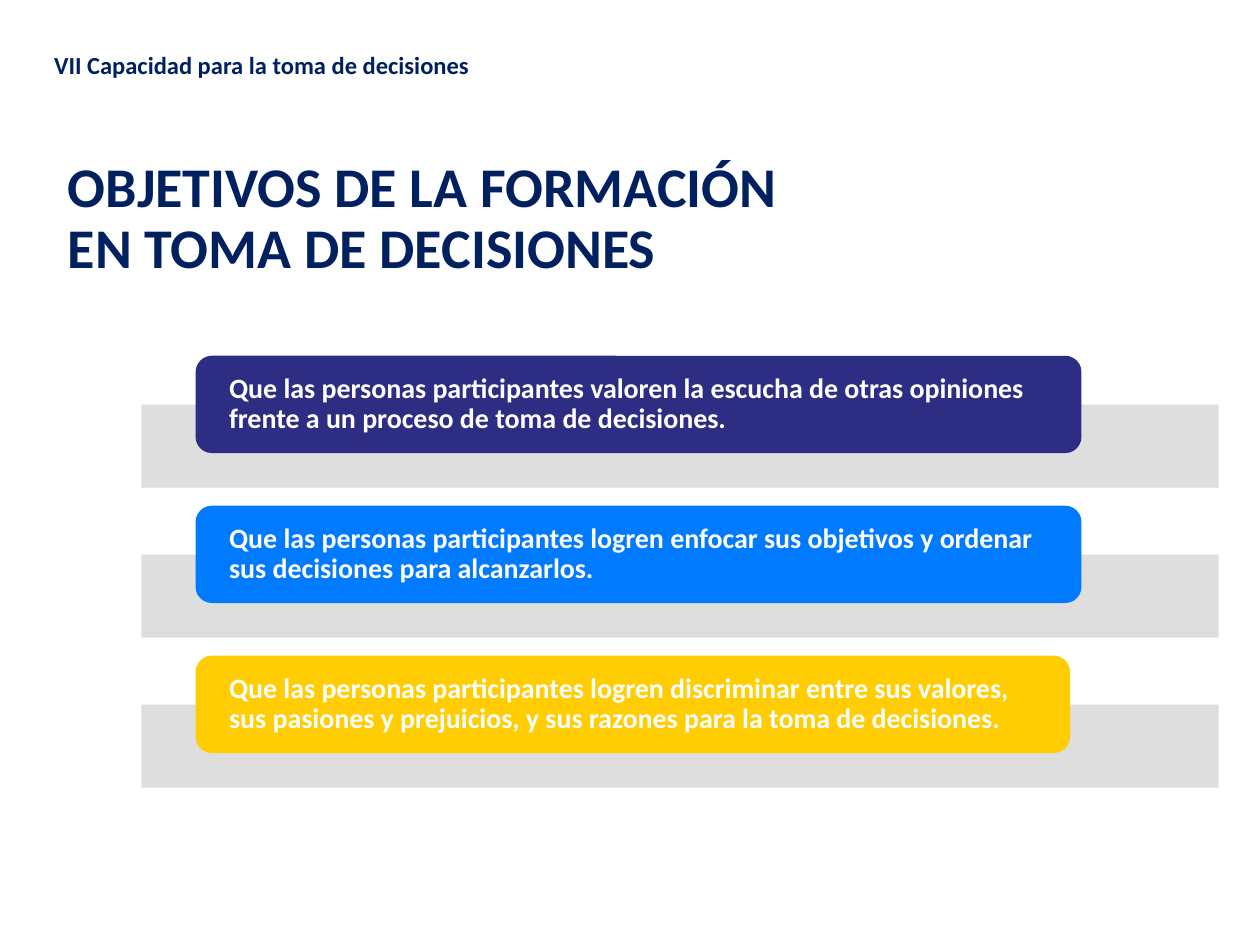
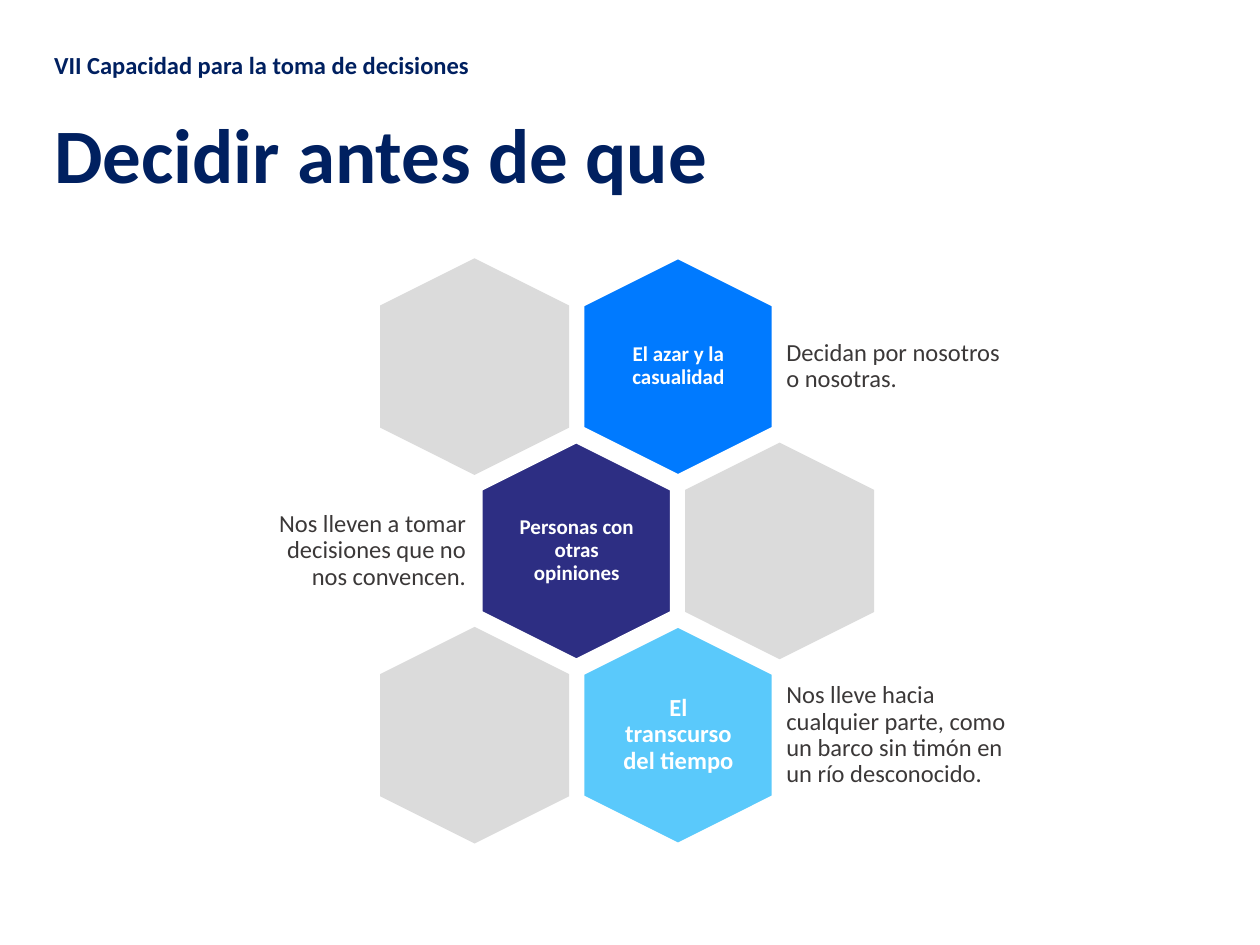
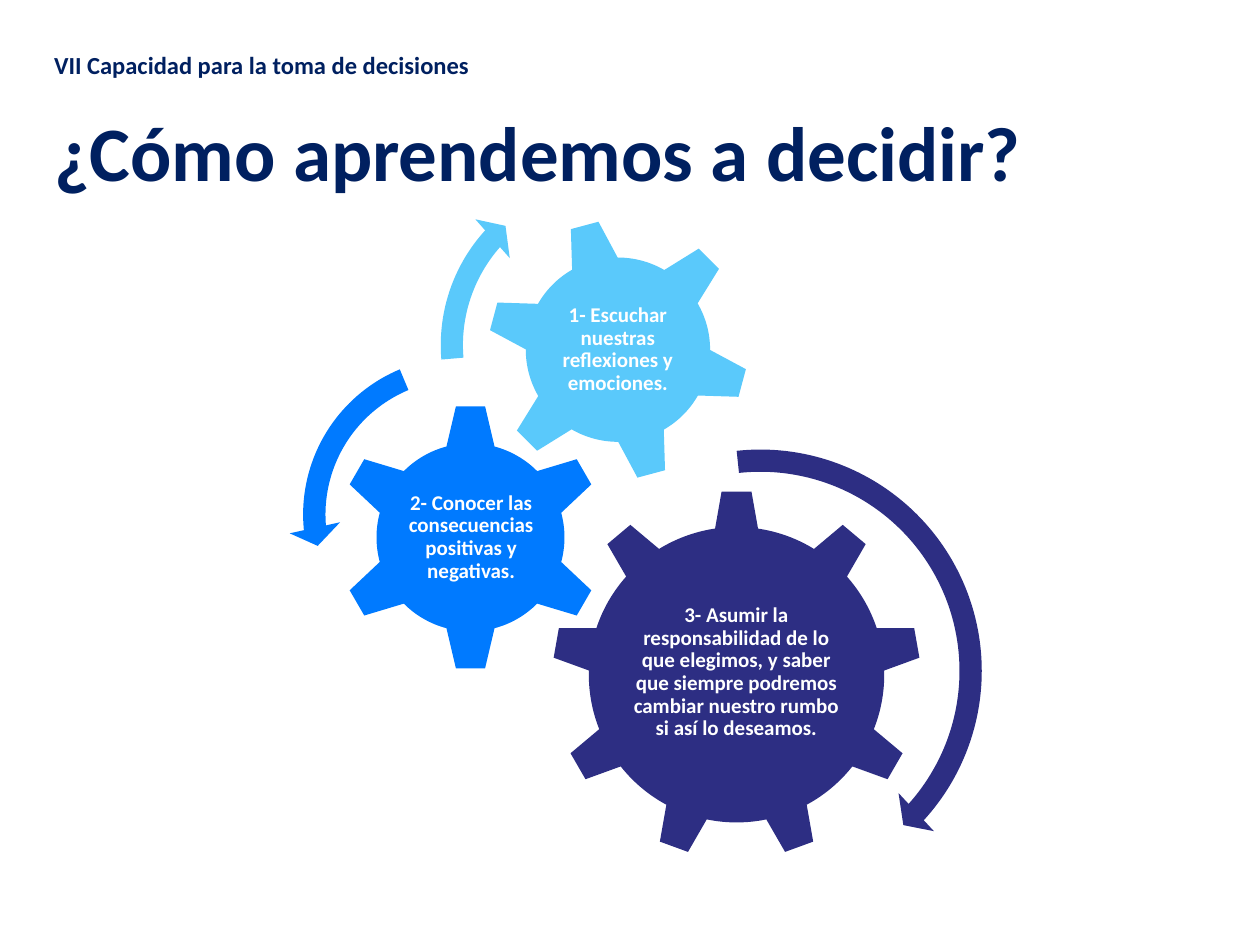
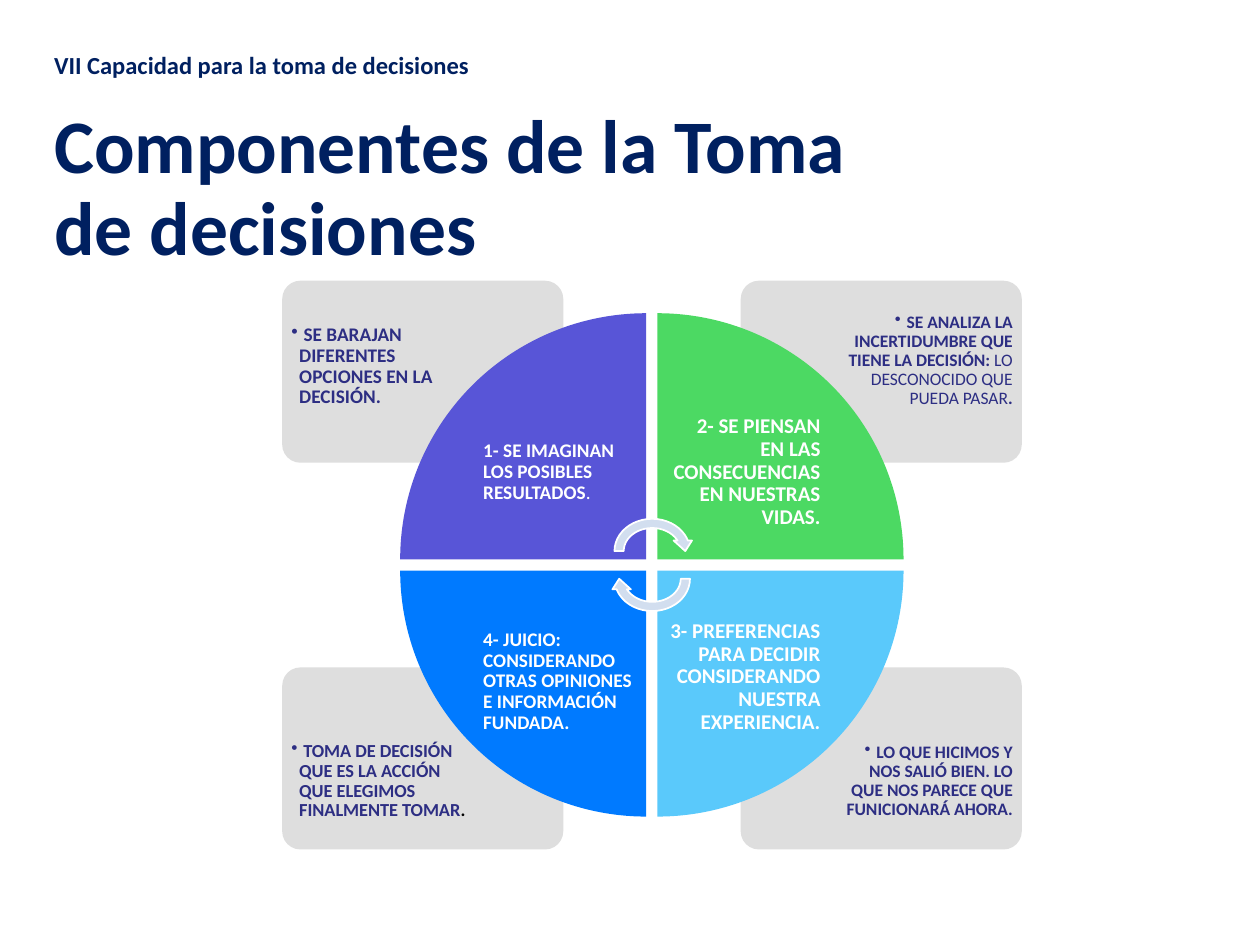
"""Build the four slides on the capacity for decision making."""
from lxml.etree import SubElement
from pptx import Presentation
from pptx.dml.color import RGBColor
from pptx.enum.shapes import MSO_SHAPE
from pptx.enum.text import MSO_ANCHOR, MSO_AUTO_SIZE, PP_ALIGN
from pptx.oxml.ns import qn
from pptx.util import Pt

COLORS = {
    "title": "002060", "indigo": "2D2E83", "blue": "007AFF", "yellow": "FFCD01",
    "sky": "5AC9FB", "violet": "5855D7", "green": "4CD963", "gray": "DBDBDB",
    "pale": "D2DEEF", "text": "3B3838", "white": "FFFFFF", "black": "000000",
}
HEADER = "VII Capacidad para la toma de decisiones"
LEFT, CENTER, RIGHT = PP_ALIGN.LEFT, PP_ALIGN.CENTER, PP_ALIGN.RIGHT
TOP, MIDDLE, BOTTOM = MSO_ANCHOR.TOP, MSO_ANCHOR.MIDDLE, MSO_ANCHOR.BOTTOM


def add_figure(slide, kind, box, fill, line=None, rotation=0, adjustments=(), alpha=None):
    figure = slide.shapes.add_shape(kind, *[Pt(length) for length in box])
    figure.shadow.inherit = False
    figure.rotation = rotation
    for index, percent in enumerate(adjustments):
        figure.adjustments[index] = percent / 100
    figure.fill.solid()
    figure.fill.fore_color.rgb = RGBColor.from_string(COLORS[fill])
    if alpha:
        tint = next(figure.fill._xPr.iter(qn("a:srgbClr")))
        SubElement(tint, qn("a:alpha"), val=str(alpha * 1000))
    if line:
        figure.line.color.rgb = RGBColor.from_string(COLORS[line])
        figure.line.width = Pt(1)
    else:
        figure.line.fill.background()


def add_text(slide, box, runs, size, color="white", bold=True, align=LEFT, anchor=MIDDLE,
             insets=(7.2, 3.6), spacing=0.9, bullet=False, fit=MSO_AUTO_SIZE.NONE):
    frame = slide.shapes.add_textbox(*[Pt(length) for length in box]).text_frame
    across, down = [Pt(inset) for inset in insets]
    frame_format = {
        "word_wrap": True, "auto_size": fit, "vertical_anchor": anchor,
        "margin_left": across, "margin_right": across,
        "margin_top": down, "margin_bottom": down,
    }
    for name, value in frame_format.items():
        setattr(frame, name, value)
    paragraph = frame.paragraphs[0]
    paragraph.alignment = align
    paragraph.line_spacing = spacing
    if bullet:
        paragraph.level = 1
        properties = paragraph._p.get_or_add_pPr()
        properties.set("marL", str(Pt(4.5)))
        properties.set("indent", str(-Pt(4.5)))
        SubElement(properties, qn("a:buChar"), char="•")
    if isinstance(runs, str):
        runs = [(runs, bold, color)]
    for words, weight, hue in runs:
        for number, row in enumerate(words.split("\n")):
            if number:
                paragraph.add_line_break()
            run = paragraph.add_run()
            run.text = row
            for name, value in {"name": "Calibri", "size": Pt(size), "bold": weight}.items():
                setattr(run.font, name, value)
            run.font.color.rgb = RGBColor.from_string(COLORS[hue])


deck = Presentation()
deck.slide_width, deck.slide_height = Pt(720), Pt(540)

titles = [
    ("OBJETIVOS DE LA FORMACIÓN\nEN TOMA DE DECISIONES", 32, (31.7, 73.4, 620.6, 104.4)),
    ("Decidir antes de que", 44, (23.8, 48.2, 620.6, 85)),
    ("¿Cómo aprendemos a decidir?", 44, (23.8, 37.4, 620.6, 104.4)),
    ("Componentes de la Toma\nde decisiones", 43.2, (23.8, 56.2, 620.6, 104.4)),
]
slides = []
for title, size, box in titles:
    slide = deck.slides.add_slide(deck.slide_layouts[6])
    add_text(slide, box, title, size, "title")
    add_text(slide, (23.8, 25.2, 355.7, 24.5), HEADER, 14, "title", anchor=TOP,
             spacing=1, fit=MSO_AUTO_SIZE.SHAPE_TO_FIT_TEXT)
    slides.append(slide)
goals_slide, risks_slide, gears_slide, parts_slide = slides

goals = [
    ("indigo", 506.2, "Que las personas participantes valoren la escucha de otras opiniones "
     "frente a un proceso de toma de decisiones."),
    ("blue", 506.2, "Que las personas participantes logren enfocar sus objetivos y ordenar "
     "sus decisiones para alcanzarlos."),
    ("yellow", 499.7, "Que las personas participantes logren discriminar entre sus valores, "
     "sus pasiones y prejuicios, y sus razones para la toma de decisiones."),
]
for row, (color, width, goal) in enumerate(goals):
    top = 203.3 + 85.7 * row
    add_figure(goals_slide, MSO_SHAPE.RECTANGLE, (80.8, top + 27.9, 615.6, 47.5), "gray", alpha=90)
    add_figure(goals_slide, MSO_SHAPE.ROUNDED_RECTANGLE, (111.8, top, width, 55.6), color)
    add_text(goals_slide, (114.5, top + 2.7, width - 5.4, 50.2), goal, 16, insets=(16.4, 0))

right_note, left_note = (445, 138.2, LEFT), (136.8, 133.9, RIGHT)
risks = [
    (2, 0, "blue", 12, "El azar y la casualidad", right_note, "Decidan por nosotros o nosotras."),
    (1, 3, "indigo", 12, "Personas con otras opiniones", left_note,
     "Nos lleven a tomar decisiones que no nos convencen."),
    (2, 0, "sky", 14, "El transcurso del tiempo", right_note,
     "Nos lleve hacia cualquier parte, como un barco sin timón en un río desconocido."),
]
for row, (column, empty_column, color, size, risk, note_place, note) in enumerate(risks):
    top = 155.5 + 105.3 * row
    for place, fill, line in ((column, color, "white"), (empty_column, "gray", None)):
        add_figure(risks_slide, MSO_SHAPE.HEXAGON, (209.3 + 58.1 * place, top, 123.8, 108),
                   fill, line, 90, (25, 115.47))
    add_text(risks_slide, (234.4 + 58.1 * column, top + 11.4, 74.2, 85), risk, size,
             align=CENTER, insets=(3.8, 3.8))
    left, width, align = note_place
    add_text(risks_slide, (left, top + 17, width, 74.2), note, 14, "text", False, align,
             insets=(4.3, 4.3))

gears = [
    (MSO_SHAPE.GEAR_9, (315.4, 280.1, 211, 211), "indigo", 0, (357.8, 329.8, 126, 108.7),
     "3- Asumir la responsabilidad de lo que elegimos, y saber que siempre podremos "
     "cambiar nuestro rumbo si así lo deseamos."),
    (MSO_SHAPE.GEAR_6, (192.2, 230.4, 153.4, 153.4), "blue", 0, (231.1, 269.3, 76.3, 75.6),
     "2- Conocer las consecuencias positivas y negativas."),
    (MSO_SHAPE.GEAR_6, (277.9, 124.6, 150.5, 150.5), "sky", 345, (311, 157.7, 84.2, 84.2),
     "1- Escuchar nuestras reflexiones y emociones."),
]
for kind, box, color, rotation, label_box, lesson in gears:
    add_figure(gears_slide, kind, box, color, rotation=rotation)
    add_text(gears_slide, label_box, lesson, 12, align=CENTER, insets=(1.2, 1.2))

turns = [
    (MSO_SHAPE.CIRCULAR_ARROW, 299.5, 248.4, 270, "indigo", (4.7, 299, 2530.4, 15831, 5.5)),
    (MSO_SHAPE.LEFT_CIRCULAR_ARROW, 164.9, 195.8, 196.6, "blue",
     (6.5, 430, 10489.1, 14837.8, 7.5)),
    (MSO_SHAPE.CIRCULAR_ARROW, 243.4, 91.4, 211.7, "sky", (6, 394.1, 13313.8, 10508.2, 7)),
]
for kind, left, top, side, color, adjustments in turns:
    add_figure(gears_slide, kind, (left, top, side, side), color, adjustments=adjustments)

notes = [
    (1, 1, 10, [(" LO QUE HICIMOS Y NOS SALIÓ BIEN. LO QUE NOS PARECE QUE FUNICIONARÁ AHORA.",
                 True, "indigo")]),
    (0, 1, 10.5, [(" TOMA DE DECISIÓN QUE ES LA ACCIÓN QUE ELEGIMOS FINALMENTE TOMAR",
                   True, "indigo"), (".", True, "black")]),
    (1, 0, 10, [(" SE ANALIZA LA INCERTIDUMBRE QUE TIENE LA DECISIÓN: ", True, "indigo"),
                ("LO DESCONOCIDO QUE PUEDA PASAR", False, "indigo"), (".", True, "indigo")]),
    (0, 0, 11, [(" SE BARAJAN DIFERENTES OPCIONES EN LA DECISIÓN.", True, "indigo")]),
]
for column, row, size, note in notes:
    add_figure(parts_slide, MSO_SHAPE.ROUNDED_RECTANGLE,
               (161.3 + 262 * column, 160.4 + 221 * row, 160.6, 104), "gray",
               adjustments=(10,), alpha=90)
    add_text(parts_slide, (163.5 + 310.2 * column, 162.7 + 247 * row, 108, 73.4), note, size,
             align=(LEFT, RIGHT)[column], anchor=(BOTTOM, TOP)[row] if not row else MIDDLE,
             insets=(3, 3), bullet=True)

parts = [
    (0, 0, "violet", 11, MIDDLE, [("1- SE IMAGINAN LOS POSIBLES RESULTADOS", True, "white"),
                                  (".", False, "white")]),
    (1, 0, "green", 12, MIDDLE, "2- SE PIENSAN EN LAS CONSECUENCIAS EN NUESTRAS VIDAS."),
    (1, 1, "sky", 12, BOTTOM, "3- PREFERENCIAS PARA DECIDIR CONSIDERANDO NUESTRA EXPERIENCIA."),
    (0, 1, "blue", 11, BOTTOM,
     "4- JUICIO: CONSIDERANDO OTRAS OPINIONES E INFORMACIÓN FUNDADA."),
]
for turn, (column, row, color, size, anchor, part) in enumerate(parts):
    add_figure(parts_slide, MSO_SHAPE.PIE_WEDGE,
               (228.7 + 147 * column, 179 + 147 * row, 140.6, 140.6), color, rotation=90 * turn)
    add_text(parts_slide, (269.9 + 105.8 * column, 220.2 + 105.8 * row, 99.4, 99.4), part, size,
             align=(LEFT, RIGHT)[column], anchor=anchor, insets=(6.2, 6.2))

for top, rotation in ((293.8, 0), (309.6, 180)):
    add_figure(parts_slide, MSO_SHAPE.CIRCULAR_ARROW, (348.5, top, 48.4, 42.2), "pale", "white",
               rotation)

deck.save("out.pptx")
